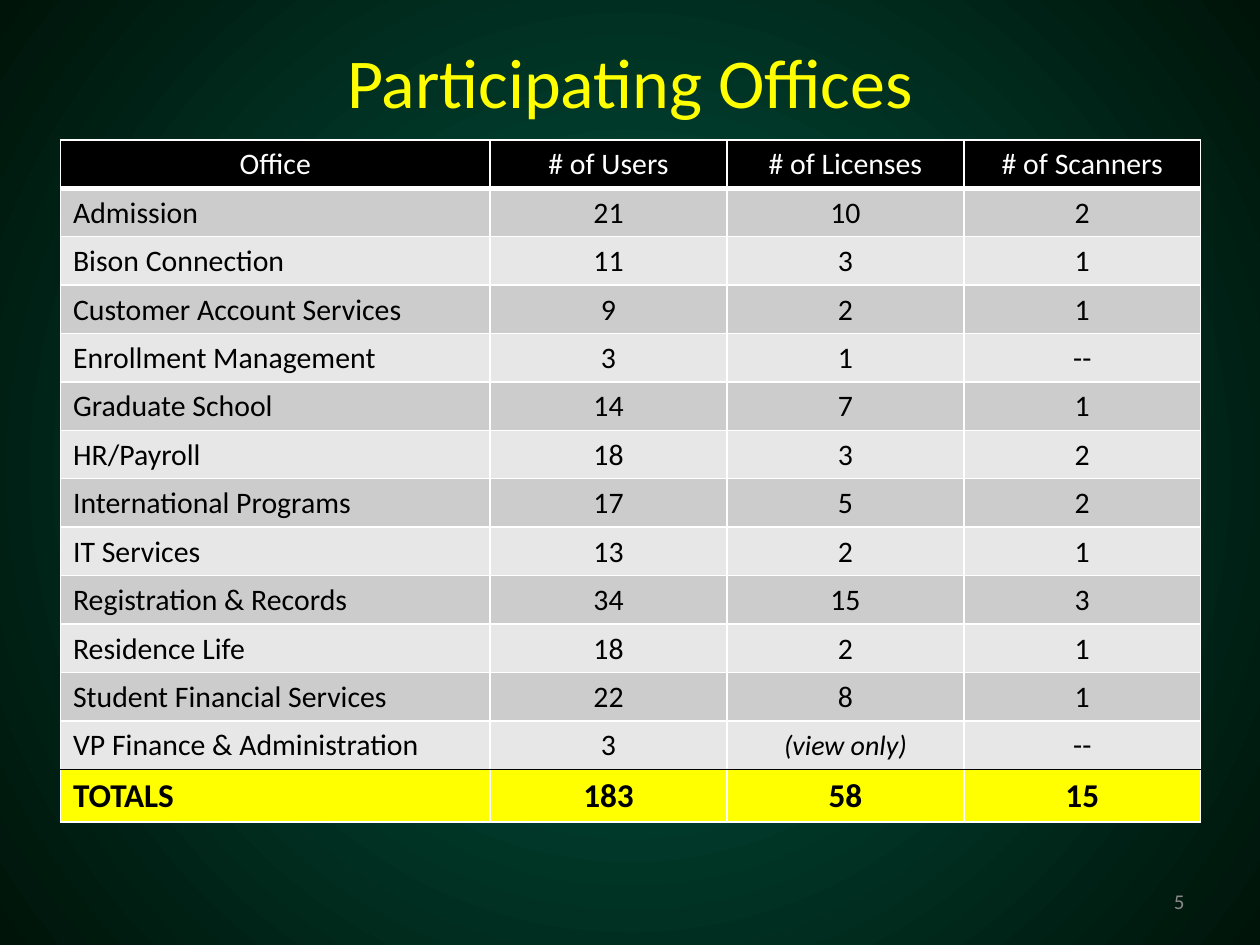
from dataclasses import dataclass

from lxml.etree import SubElement
from pptx import Presentation
from pptx.dml.color import RGBColor
from pptx.enum.text import MSO_ANCHOR as Anchor, PP_ALIGN as Align
from pptx.oxml import parse_xml
from pptx.oxml.ns import nsdecls, qn
from pptx.util import Inches, Pt


@dataclass(frozen=True)
class Theme:
    font: str = "Calibri"
    glow: str = "005643"
    edge: str = "001409"
    yellow: str = "FFFF00"
    white: str = "FFFFFF"
    black: str = "000000"
    gray: str = "898989"
    bands: tuple[str, str] = ("CCCCCC", "E7E7E7")
    title_size: int = 40
    total_size: int = 19
    body_size: int = 17
    note_size: int = 16
    number_size: int = 12


@dataclass(frozen=True)
class TextStyle:
    size: int
    color: str
    bold: bool = False
    italic: bool = False


@dataclass(frozen=True)
class Border:
    side: str
    color: str
    width: int = 1


@dataclass(frozen=True)
class Office:
    name: str
    users: str
    licenses: str
    scanners: str

    def values(self) -> tuple[str, ...]:
        return self.name, self.users, self.licenses, self.scanners


THEME = Theme()
HEADER = Office("Office", "# of Users", "# of Licenses", "# of Scanners")
TOTALS = Office("TOTALS", "183", "58", "15")
VIEW_ONLY = "(view only)"
OFFICES = [
    Office("Admission", "21", "10", "2"),
    Office("Bison Connection", "11", "3", "1"),
    Office("Customer Account Services", "9", "2", "1"),
    Office("Enrollment Management", "3", "1", "--"),
    Office("Graduate School", "14", "7", "1"),
    Office("HR/Payroll", "18", "3", "2"),
    Office("International Programs", "17", "5", "2"),
    Office("IT Services", "13", "2", "1"),
    Office("Registration & Records", "34", "15", "3"),
    Office("Residence Life", "18", "2", "1"),
    Office("Student Financial Services", "22", "8", "1"),
    Office("VP Finance & Administration", "3", VIEW_ONLY, "--"),
]
HEADER_STYLE = TextStyle(THEME.body_size, THEME.white)
BODY_STYLE = TextStyle(THEME.body_size, THEME.black)
NOTE_STYLE = TextStyle(THEME.note_size, THEME.black, italic=True)
TOTAL_STYLE = TextStyle(THEME.total_size, THEME.black, bold=True)


def paint_background(slide) -> None:
    slide.element.cSld.insert(0, parse_xml(
        f'<p:bg {nsdecls("p", "a")}><p:bgPr><a:gradFill rotWithShape="1"><a:gsLst>'
        f'<a:gs pos="2000"><a:srgbClr val="{THEME.glow}"/></a:gs>'
        f'<a:gs pos="100000"><a:srgbClr val="{THEME.edge}"/></a:gs></a:gsLst>'
        '<a:path path="circle"><a:fillToRect l="50000" t="50000" r="50000" b="50000"/></a:path>'
        '</a:gradFill><a:effectLst/></p:bgPr></p:bg>'))


def write(frame, text: str, style: TextStyle, align: Align) -> None:
    para = frame.paragraphs[0]
    para.text = text
    para.alignment = align
    font = para.font
    font.name = THEME.font
    font.size = Pt(style.size)
    font.bold = style.bold
    font.italic = style.italic
    font.color.rgb = RGBColor.from_string(style.color)


def add_text(slide, text: str, style: TextStyle, align: Align,
             left: float, top: float, width: float, height: float) -> None:
    box = slide.shapes.add_textbox(Inches(left), Inches(top), Inches(width), Inches(height))
    frame = box.text_frame
    frame.word_wrap = True
    frame.vertical_anchor = Anchor.MIDDLE
    write(frame, text, style, align)


def draw_borders(cell, borders: list[Border]) -> None:
    properties = cell._tc.get_or_add_tcPr()
    for position, border in enumerate(borders):
        line = properties.makeelement(qn(f"a:ln{border.side}"), {"w": str(Pt(border.width))})
        fill = SubElement(line, qn("a:solidFill"))
        SubElement(fill, qn("a:srgbClr"), val=border.color)
        properties.insert(position, line)


def fill_row(cells, office: Office, style: TextStyle, fill: str,
             first_align: Align = Align.LEFT, top: str | None = THEME.white,
             bottom: str | None = THEME.white, bottom_width: int = 1) -> None:
    borders = [Border("L", THEME.white), Border("R", THEME.white)]
    if top:
        borders.append(Border("T", top))
    if bottom:
        borders.append(Border("B", bottom, bottom_width))
    for column, (cell, text) in enumerate(zip(cells, office.values())):
        cell.margin_top, cell.margin_bottom = Inches(0.05), Inches(0.04)
        cell.vertical_anchor = Anchor.MIDDLE
        cell.fill.solid()
        cell.fill.fore_color.rgb = RGBColor.from_string(fill)
        write(cell.text_frame, text, NOTE_STYLE if text == VIEW_ONLY else style,
              Align.CENTER if column else first_align)
        draw_borders(cell, borders)


def add_office_table(slide) -> None:
    row_count = len(OFFICES) + 2
    height, total_height = Inches(5.42), Inches(0.42)
    table = slide.shapes.add_table(row_count, 4, Inches(0.48), Inches(1.11),
                                   Inches(9.05), height).table
    for column, width in zip(table.columns, (3.41, 1.88, 1.88, 1.88)):
        column.width = Inches(width)
    for row in table.rows:
        row.height = (height - total_height) // (row_count - 1)
    header, *body, totals = table.rows
    totals.height = total_height

    fill_row(header.cells, HEADER, HEADER_STYLE, THEME.black, Align.CENTER, bottom_width=3)
    last = len(OFFICES) - 1
    for index, (row, office) in enumerate(zip(body, OFFICES)):
        bottom = {last - 1: None, last: THEME.black}.get(index, THEME.white)
        fill_row(row.cells, office, BODY_STYLE, THEME.bands[index % 2],
                 top=None if index == last else THEME.white, bottom=bottom)
    fill_row(totals.cells, TOTALS, TOTAL_STYLE, THEME.yellow, top=THEME.black)


def main() -> None:
    deck = Presentation()
    deck.slide_width, deck.slide_height = Inches(10), Inches(7.5)
    slide = deck.slides.add_slide(deck.slide_layouts[6])
    paint_background(slide)
    add_text(slide, "Participating Offices", TextStyle(THEME.title_size, THEME.yellow),
             Align.CENTER, 0.5, 0.25, 9, 0.78)
    add_text(slide, "5", TextStyle(THEME.number_size, THEME.gray),
             Align.RIGHT, 7.17, 6.95, 2.33, 0.4)
    add_office_table(slide)
    deck.save("out.pptx")


if __name__ == "__main__":
    main()
